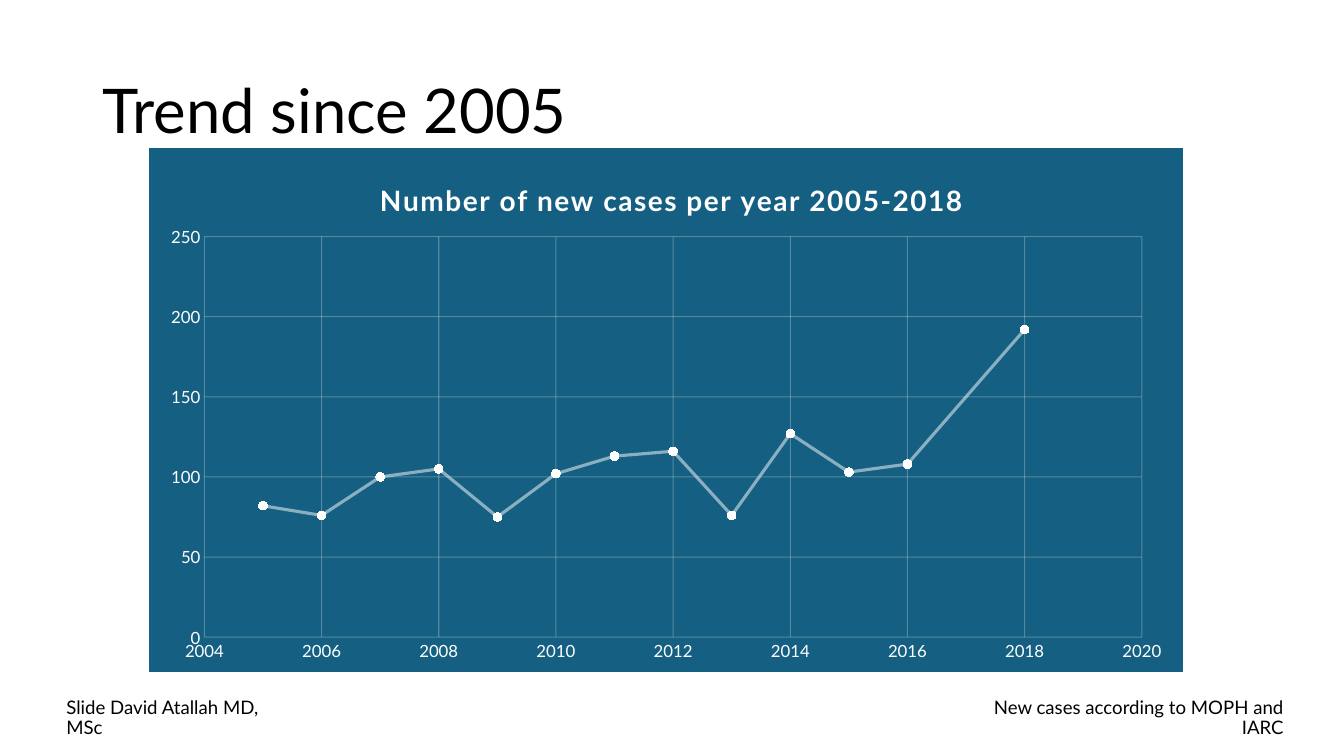
from lxml import etree
from pptx import Presentation
from pptx.chart.data import XyChartData
from pptx.dml.color import RGBColor
from pptx.enum.chart import XL_CHART_TYPE, XL_MARKER_STYLE, XL_TICK_MARK
from pptx.enum.text import MSO_ANCHOR, PP_ALIGN
from pptx.oxml import parse_xml
from pptx.oxml.ns import nsdecls, qn
from pptx.util import Inches, Pt

BLACK = RGBColor(0x00, 0x00, 0x00)
WHITE = RGBColor(0xFF, 0xFF, 0xFF)
BLUE = RGBColor(0x15, 0x60, 0x82)
FONT = "Lato"

CASES_BY_YEAR = {
    2018: 192, 2016: 108, 2015: 103, 2014: 127, 2013: 76, 2012: 116, 2011: 113,
    2010: 102, 2009: 75, 2008: 105, 2007: 100, 2006: 76, 2005: 82,
}


def style_font(font, size, color):
    font.name = FONT
    font.size = Pt(size)
    font.color.rgb = color


def add_text(page, text, left, top, width, height, size, anchor, align=PP_ALIGN.LEFT):
    box = page.shapes.add_textbox(Inches(left), Inches(top), Inches(width), Inches(height))
    frame = box.text_frame
    frame.text = text
    frame.word_wrap = True
    frame.vertical_anchor = anchor
    paragraph = frame.paragraphs[0]
    paragraph.alignment = align
    paragraph.line_spacing = 0.9
    style_font(paragraph.runs[0].font, size, BLACK)


def style_line(line, width, opacity):
    """Draw a white line with the given opacity in percent."""
    line.width = Pt(width)
    line.color.rgb = WHITE
    color = line._ln.find(".//" + qn("a:srgbClr"))
    etree.SubElement(color, qn("a:alpha"), val=str(opacity * 1000))


def style_axis(axis, low, high, step):
    axis.minimum_scale, axis.maximum_scale, axis.major_unit = low, high, step
    axis.major_tick_mark = axis.minor_tick_mark = XL_TICK_MARK.NONE
    axis.format.line.fill.background()
    axis.has_major_gridlines = True
    style_line(axis.major_gridlines.format.line, 0.75, 25)
    axis.tick_labels.number_format = "General"
    axis.tick_labels.number_format_is_linked = False
    style_font(axis.tick_labels.font, 12, WHITE)


def manual_layout(inner="", **fractions):
    """Build a layout element from fractions of the chart's size."""
    modes = "".join(f'<c:{axis}Mode val="edge"/>' for axis in "xy")
    values = "".join(f'<c:{key} val="{value}"/>' for key, value in fractions.items())
    return parse_xml(
        f'<c:layout {nsdecls("c")}><c:manualLayout>{inner}{modes}{values}'
        "</c:manualLayout></c:layout>"
    )


def set_layout(element, layout, index):
    for old in element.findall(qn("c:layout")):
        element.remove(old)
    element.insert(index, layout)


def add_chart_title(chart, text):
    title = chart.chart_title
    title.text_frame.text = text
    span = title.text_frame.paragraphs[0].runs[0]
    style_font(span.font, 20, WHITE)
    span.font.bold = True
    span.font._element.set("spc", "100")
    title.include_in_layout = False
    set_layout(title._element, manual_layout(x=0.218, y=0.05), 1)


def fill_chart_area(chart):
    area = parse_xml(
        f'<c:spPr {nsdecls("c", "a")}><a:solidFill><a:srgbClr val="{BLUE}"/></a:solidFill>'
        f'<a:ln w="9525"><a:solidFill><a:srgbClr val="{BLUE}"/></a:solidFill></a:ln></c:spPr>'
    )
    chart._chartSpace.find(qn("c:chart")).addnext(area)


def add_cases_chart(page):
    data = XyChartData()
    cases = data.add_series("Series 1")
    for year, count in CASES_BY_YEAR.items():
        cases.add_data_point(year, count)
    chart = page.shapes.add_chart(
        XL_CHART_TYPE.XY_SCATTER_SMOOTH,
        Inches(1.48), Inches(1.47), Inches(10.25), Inches(5.2), data,
    ).chart
    style_font(chart.font, 10, BLACK)
    chart.has_legend = False
    chart.plots[0].vary_by_categories = False
    fill_chart_area(chart)
    add_chart_title(chart, "Number of new cases per year 2005-2018")
    style_axis(chart.category_axis, 2004, 2020, 2)
    style_axis(chart.value_axis, 0, 250, 50)

    series = chart.plots[0].series[0]
    series.smooth = True
    style_line(series.format.line, 2.25, 50)
    series.marker.style = XL_MARKER_STYLE.CIRCLE
    series.marker.size = 6
    series.marker.format.fill.solid()
    series.marker.format.fill.fore_color.rgb = WHITE
    series.marker.format.line.fill.background()

    plot_area = chart._chartSpace.find(".//" + qn("c:plotArea"))
    inner = '<c:layoutTarget val="inner"/>'
    set_layout(plot_area, manual_layout(inner, x=0.053, y=0.168, w=0.908, h=0.766), 0)


def main():
    deck = Presentation()
    deck.slide_width, deck.slide_height = Inches(13.33), Inches(7.5)
    page = deck.slides.add_slide(deck.slide_layouts[6])
    add_text(page, "Trend since 2005", 0.92, 0.4, 11.5, 1.45, 44, MSO_ANCHOR.MIDDLE)
    add_text(page, "Slide David Atallah MD, MSc", 0.56, 7.08, 2.34, 0.3, 13.3, MSO_ANCHOR.BOTTOM)
    add_text(page, "New cases according to MOPH and IARC", 9.58, 7.08, 3.25, 0.3, 13.3,
             MSO_ANCHOR.BOTTOM, PP_ALIGN.RIGHT)
    add_cases_chart(page)
    deck.save("out.pptx")


if __name__ == "__main__":
    main()
